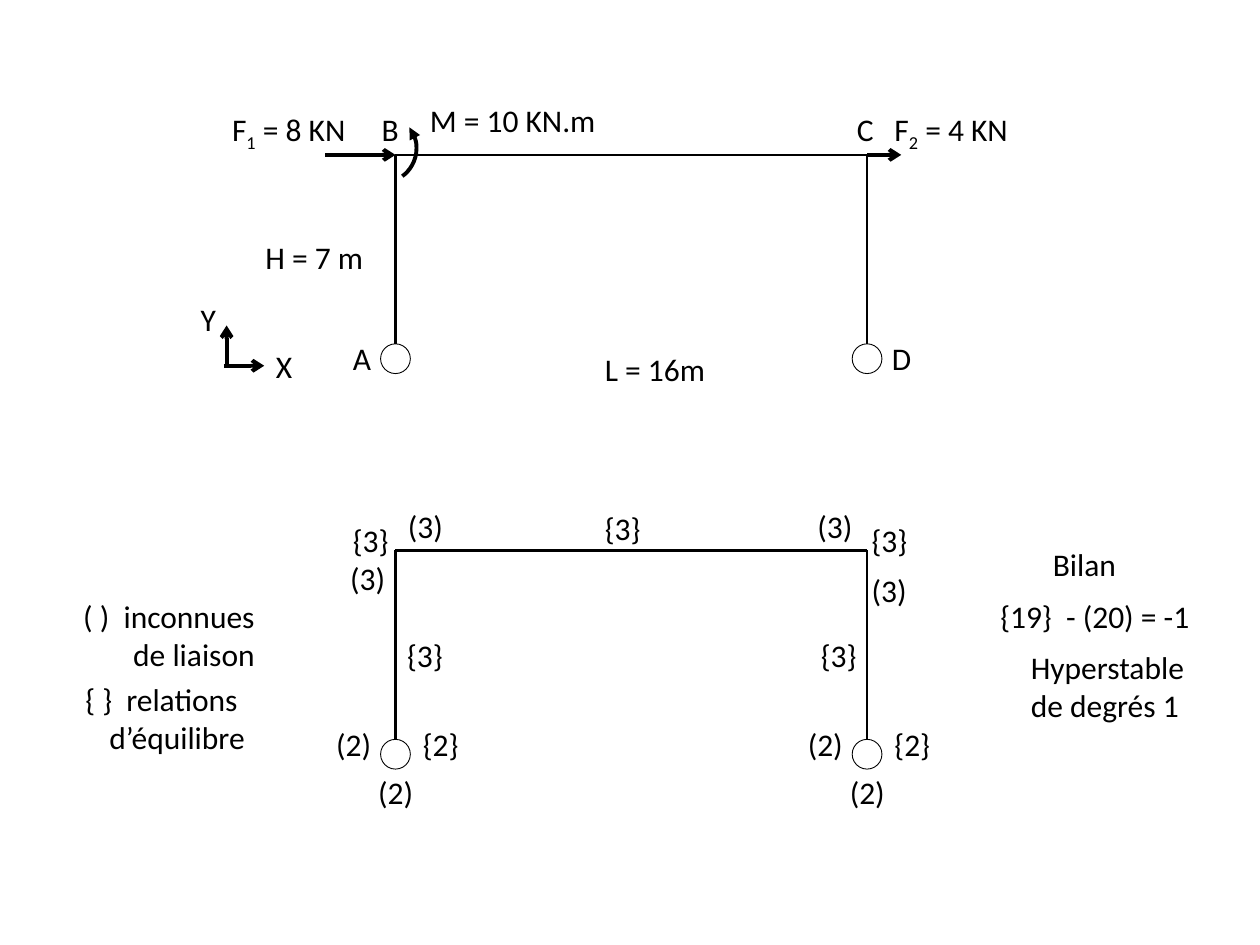
from lxml.etree import SubElement
from pptx import Presentation
from pptx.dml.color import RGBColor
from pptx.enum.shapes import MSO_CONNECTOR, MSO_SHAPE
from pptx.enum.text import MSO_AUTO_SIZE, PP_ALIGN
from pptx.oxml.ns import qn
from pptx.util import Pt

COLORS = {"ink": "000000", "paper": "FFFFFF"}
LEFT, RIGHT = 226, 495.5
SPAN, DROP = 226, 108
TOP = 88.5
BASE = TOP + SPAN
BALL = 17


class Sketch:
    def __init__(self, slide, font="Calibri", size=18):
        self.slide, self.font, self.size = slide, font, size
        self.shapes = slide.shapes
        fill = slide.background.fill
        fill.solid()
        fill.fore_color.rgb = self.color("paper")

    def color(self, name):
        return RGBColor.from_string(COLORS[name])

    def group(self):
        """Send the next elements into a new group."""
        self.shapes = self.slide.shapes.add_group_shape().shapes

    def leave(self):
        """Send the next elements straight to the slide."""
        self.shapes = self.slide.shapes

    def stroke(self, shape, width, end=None, kind=None):
        """Ink the outline; end is headEnd or tailEnd."""
        shape.line.color.rgb = self.color("ink")
        shape.line.width = Pt(width)
        if end:
            SubElement(shape.line._get_or_add_ln(), qn(f"a:{end}"), type=kind)

    def line(self, x1, y1, x2, y2, width=1.5, arrow=False):
        line = self.shapes.add_connector(
            MSO_CONNECTOR.STRAIGHT, Pt(x1), Pt(y1), Pt(x2), Pt(y2))
        self.stroke(line, width, "tailEnd" if arrow else None, "arrow")
        SubElement(line._element.spPr, qn("a:effectLst"))

    def arrow(self, x1, y1, x2, y2):
        self.line(x1, y1, x2, y2, 2.25, True)

    def shape(self, kind, x, y, size):
        shape = self.shapes.add_shape(kind, Pt(x), Pt(y), Pt(size), Pt(size))
        shape.shadow.inherit = False
        shape.fill.background()
        return shape

    def ball(self, x, y):
        """Hinge whose top touches the point."""
        self.stroke(self.shape(MSO_SHAPE.OVAL, x - BALL / 2, y, BALL), 0.5)

    def turn(self, x, y, size):
        """Curved arrow for the moment."""
        arc = self.shape(MSO_SHAPE.ARC, x, y, size)
        arc.adjustments[0], arc.adjustments[1] = 193.6, 32.32
        self.stroke(arc, 2.25, "headEnd", "triangle")

    def text(self, x, y, width, *lines, rights=()):
        """Each line is a string or a list of runs, the second a subscript."""
        height = 29 if len(lines) == 1 else 51
        box = self.shapes.add_textbox(Pt(x), Pt(y), Pt(width), Pt(height))
        frame = box.text_frame
        frame.word_wrap = False
        frame.auto_size = MSO_AUTO_SIZE.SHAPE_TO_FIT_TEXT
        for i, line in enumerate(lines):
            para = frame.add_paragraph() if i else frame.paragraphs[0]
            para.alignment = PP_ALIGN.RIGHT if i in rights else PP_ALIGN.LEFT
            for j, part in enumerate([line] if isinstance(line, str) else line):
                run = para.add_run()
                run.text = part
                run.font.name, run.font.size = self.font, Pt(self.size)
                run.font.color.rgb = self.color("ink")
                if j == 1:
                    run.font._element.set("baseline", "-25000")

    def frame(self, top):
        """Portal frame on two hinges."""
        self.group()
        for x in (LEFT, RIGHT):
            self.ball(x, top + DROP)
            self.line(x, top + DROP, x, top)
        self.line(LEFT, top, RIGHT, top)
        self.leave()

    def axes(self):
        self.group()
        self.arrow(129.5, 209.5, 129.5, 186)
        self.arrow(128, 209, 151, 209)
        self.text(107.5, 168, 23, "Y")
        self.text(150.5, 194.5, 24, "X")
        self.leave()


def loads(art):
    art.frame(TOP)
    art.arrow(186, TOP, LEFT, TOP)
    art.arrow(RIGHT, TOP, 515, TOP)
    art.turn(198.5, 65, 39.5)
    for x, y, width, line in (
        (238.5, 54, 110, "M = 10 KN.m"),
        (125.5, 59.5, 81.5, ["F", "1", " = 8 KN"]),
        (504, 59.5, 81.5, ["F", "2", " = 4 KN"]),
        (194.5, 190, 25, "A"),
        (211, 59.5, 24.5, "B"),
        (482.5, 59.5, 24.5, "C"),
        (502.5, 190, 26, "D"),
        (144.5, 132.5, 71, "H = 7 m"),
        (338.5, 196.5, 73, "L = 16m"),
    ):
        art.text(x, y, width, line)
    art.axes()


def counts(art):
    art.frame(BASE)
    marks = {
        "(3)": [(193, 316), (226, 286), (460, 286), (491, 323)],
        "{3}": [(194.5, 294), (225.5, 360), (338.5, 287.5), (462, 360), (491, 294)],
        "(2)": [(x + dx, y) for x in (LEFT, RIGHT)
                for dx, y in ((-41, 410.5), (-17, 438))],
        "{2}": [(x + 8.5, 410.5) for x in (LEFT, RIGHT)],
    }
    for mark, spots in marks.items():
        for x, y in spots:
            art.text(x, y, 35, mark)


def notes(art):
    art.text(40.5, 337.5, 113.5, "( )  inconnues", "de liaison", rights=(1,))
    art.text(40.5, 385, 106.5, "{ }  relations ", "d’équilibre", rights=(0, 1))
    art.text(594.5, 308, 51, "Bilan")
    art.text(564.5, 337.5, 126, "{19}  - (20) = -1")
    art.text(582, 367, 103, "Hyperstable", "de degrés 1")


def main():
    deck = Presentation()
    deck.slide_width, deck.slide_height = Pt(720), Pt(540)
    art = Sketch(deck.slides.add_slide(deck.slide_layouts[6]))
    loads(art)
    counts(art)
    notes(art)
    deck.save("out.pptx")


if __name__ == "__main__":
    main()
